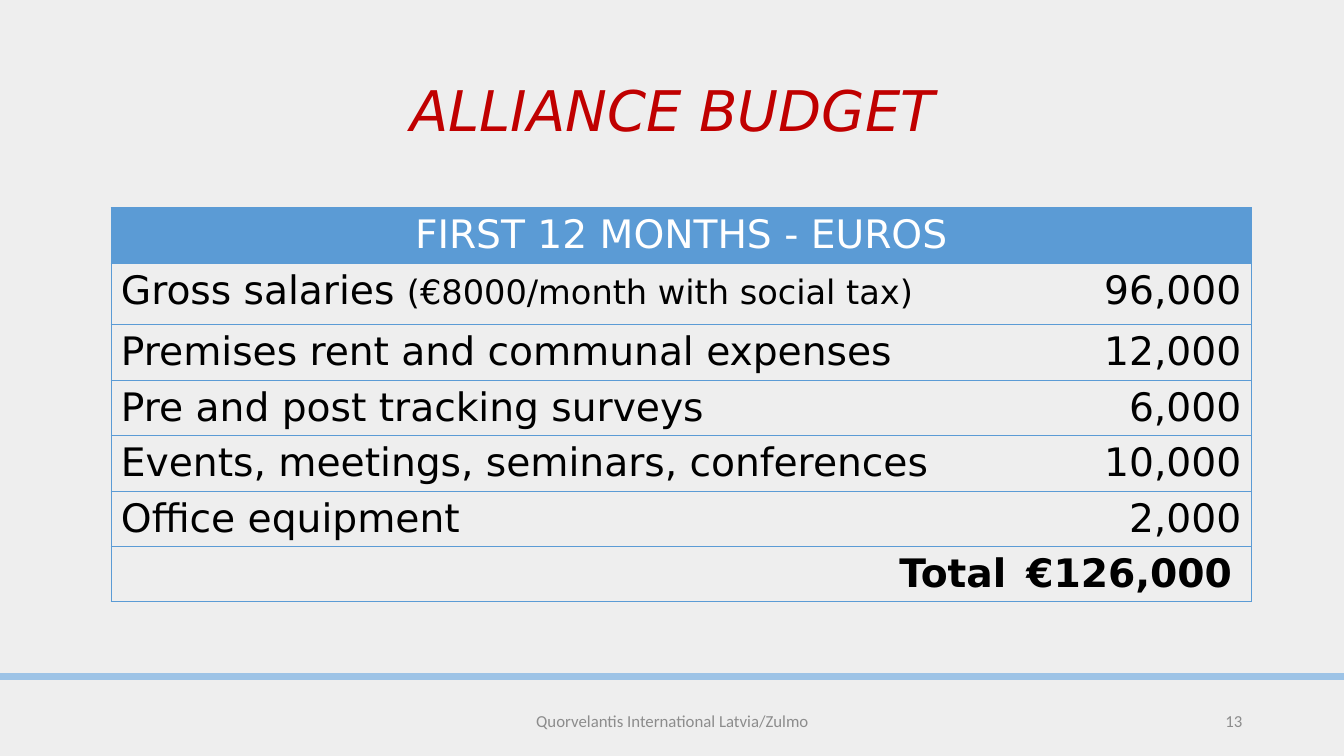
"""Build the alliance budget slide with its table of first-year costs."""
from lxml.etree import SubElement
from pptx import Presentation
from pptx.dml.color import RGBColor
from pptx.enum.shapes import MSO_SHAPE
from pptx.enum.text import MSO_ANCHOR, PP_ALIGN
from pptx.oxml.ns import qn
from pptx.util import Inches, Pt

BLUE = "5B9BD5"
RED = "C00000"
GREY = "8C8C8C"
LEFT, MID, RIGHT = PP_ALIGN.LEFT, PP_ALIGN.CENTER, PP_ALIGN.RIGHT


def color(code):
    return RGBColor.from_string(code)


def write(frame, *parts, size=28, font="DejaVu Sans", fill="000000",
          align=LEFT, bold=False, italic=False, space=1.0):
    line = frame.paragraphs[0]
    line.alignment = align
    line.line_spacing = space
    for part in parts:
        words, points = part if isinstance(part, tuple) else (part, size)
        run = line.add_run()
        run.text = words
        run.font.name = font
        run.font.size = Pt(points)
        run.font.bold = bold
        run.font.italic = italic
        run.font.color.rgb = color(fill)


deck = Presentation()
deck.slide_width, deck.slide_height = Inches(13.33), Inches(7.5)
slide = deck.slides.add_slide(deck.slide_layouts[6])
back = slide.background.fill
back.solid()
back.fore_color.rgb = color("EEEEEE")

foot = dict(size=12, font="Calibri", fill=GREY)
texts = [
    ((0.92, 0.4, 11.5, 1.45), "ALLIANCE BUDGET",
     dict(size=40, fill=RED, italic=True, align=MID, space=0.9)),
    ((4.42, 6.95, 4.5, 0.4), "Quorvelantis International Latvia/Zulmo",
     dict(foot, align=MID)),
    ((9.42, 6.95, 3, 0.4), "13", dict(foot, align=RIGHT)),
]
for place, words, style in texts:
    frame = slide.shapes.add_textbox(*map(Inches, place)).text_frame
    frame.word_wrap = True
    frame.vertical_anchor = MSO_ANCHOR.MIDDLE
    write(frame, words, **style)

band = slide.shapes.add_shape(
    MSO_SHAPE.RECTANGLE, Inches(0), Inches(6.68), Inches(13.33), Inches(0.06))
band.shadow.inherit = False
band.fill.solid()
band.fill.fore_color.rgb = color("9DC3E6")
band.line.color.rgb = color("9DC3E6")
band.line.width = Pt(1)

costs = [
    (("Gross salaries ", ("(€8000/month with social tax)", 24)), "96,000"),
    (("Premises rent and communal expenses",), "12,000"),
    (("Pre and post tracking surveys",), "6,000"),
    (("Events, meetings, seminars, conferences",), "10,000"),
    (("Office equipment",), "2,000"),
]
table = slide.shapes.add_table(
    len(costs) + 2, 2, Inches(1.1), Inches(2.06),
    Inches(11.31), Inches(3.91)).table
table.first_row = table.horz_banding = False
table.columns[0].width = Inches(8.98)
table.columns[1].width = Inches(2.33)

for r, row in enumerate(table.rows):
    row.height = Inches(0.61 if r == 1 else 0.55)
    for c, cell in enumerate(row.cells):
        cell.margin_bottom = Inches(0.03)
        props = cell._tc.get_or_add_tcPr()
        hidden = "lnR" if c == 0 and r > 0 else "lnL" if c == 1 else ""
        for side in ("lnL", "lnR", "lnT", "lnB"):
            edge = SubElement(props, qn(f"a:{side}"), w=str(Pt(0.5)))
            if side == hidden:
                SubElement(edge, qn("a:noFill"))
            else:
                ink = SubElement(edge, qn("a:solidFill"))
                SubElement(ink, qn("a:srgbClr"), val=BLUE)
        if r == 0:
            cell.fill.solid()
            cell.fill.fore_color.rgb = color(BLUE)
        else:
            cell.fill.background()

head = table.cell(0, 0)
head.merge(table.cell(0, 1))
write(head.text_frame, "FIRST 12 MONTHS - EUROS", fill="FFFFFF", align=MID)
for r, (label, sum_) in enumerate(costs, 1):
    write(table.cell(r, 0).text_frame, *label)
    write(table.cell(r, 1).text_frame, sum_, align=RIGHT)
last = len(costs) + 1
write(table.cell(last, 0).text_frame, "Total", bold=True, align=RIGHT)
write(table.cell(last, 1).text_frame, "€126,000", bold=True)

deck.save("out.pptx")
